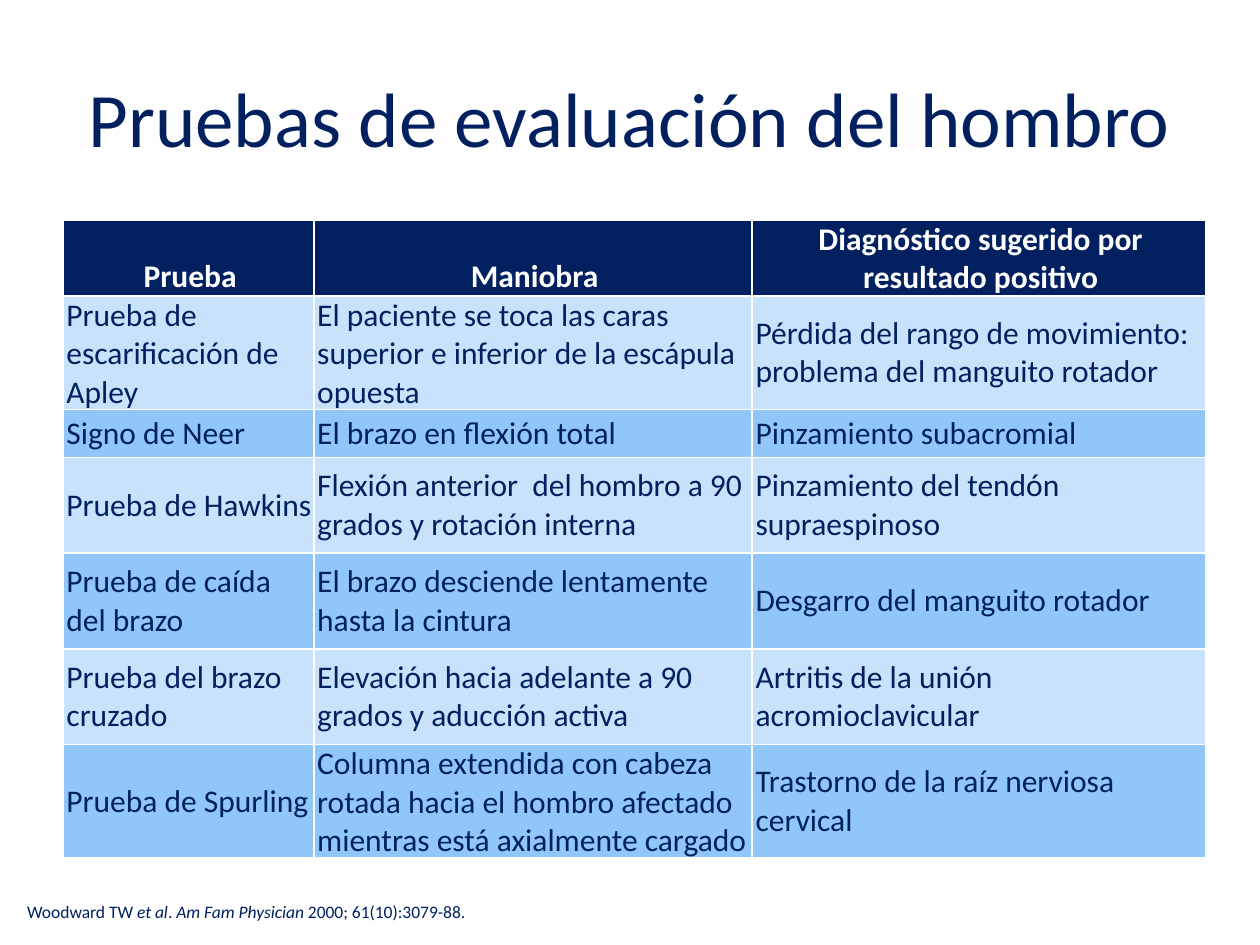
"""Builds a slide with a table of shoulder evaluation tests."""
import pptx
import pptx.dml.color
import pptx.enum.text
import pptx.oxml
import pptx.oxml.ns
import pptx.util

Pt = pptx.util.Pt
ALIGN = pptx.enum.text.PP_ALIGN
ANCHOR = pptx.enum.text.MSO_ANCHOR
COLOURS = {"navy": "002060", "white": "FFFFFF", "pale": "C8E2FC", "sky": "91C6F9"}
FONT = "Calibri"
COLUMN_WIDTHS = [143.3, 250.5, 259.2]
ROW_HEIGHTS = [28, 42.5, 27.4] + [54.7] * 4
TESTS = [
    ("Prueba", "Maniobra", "Diagnóstico sugerido por resultado positivo"),
    ("Prueba de escarificación de Apley",
     "El paciente se toca las caras superior e inferior de la escápula opuesta",
     "Pérdida del rango de movimiento: problema del manguito rotador"),
    ("Signo de Neer", "El brazo en flexión total", "Pinzamiento subacromial"),
    ("Prueba de Hawkins",
     "Flexión anterior  del hombro a 90 grados y rotación interna",
     "Pinzamiento del tendón supraespinoso"),
    ("Prueba de caída del brazo",
     "El brazo desciende lentamente hasta la cintura",
     "Desgarro del manguito rotador"),
    ("Prueba del brazo cruzado",
     "Elevación hacia adelante a 90 grados y aducción activa",
     "Artritis de la unión acromioclavicular"),
    ("Prueba de Spurling",
     "Columna extendida con cabeza rotada hacia el hombro afectado mientras está axialmente cargado",
     "Trastorno de la raíz nerviosa cervical"),
]
CITATION = [("Woodward TW ", False), ("et al", True), (". ", False),
            ("Am Fam Physician", True), (" 2000; 61(10):3079-88.", False)]


def rgb(name):
    return pptx.dml.color.RGBColor.from_string(COLOURS[name])


def add_run(paragraph, words, size, colour="navy", bold=False, italic=False):
    run = paragraph.add_run()
    run.text = words
    run.font.name = FONT
    run.font.size = Pt(size)
    run.font.bold = bold
    run.font.italic = italic
    run.font.color.rgb = rgb(colour)


def add_text(slide, left, top, width, height, pieces, size,
             align=ALIGN.LEFT, anchor=ANCHOR.TOP):
    frame = slide.shapes.add_textbox(Pt(left), Pt(top), Pt(width), Pt(height)).text_frame
    frame.word_wrap = True
    frame.vertical_anchor = anchor
    paragraph = frame.paragraphs[0]
    paragraph.alignment = align
    for words, italic in pieces:
        add_run(paragraph, words, size, italic=italic)


def add_borders(cell):
    properties = cell._tc.get_or_add_tcPr()
    for side in "LRTB":
        properties.append(pptx.oxml.parse_xml(
            f'<a:ln{side} {pptx.oxml.ns.nsdecls("a")} w="{Pt(1)}"><a:solidFill>'
            f'<a:srgbClr val="{COLOURS["white"]}"/></a:solidFill></a:ln{side}>'))


def fill_cell(cell, words, row):
    header = row == 0
    add_borders(cell)
    cell.fill.solid()
    cell.fill.fore_color.rgb = rgb("navy" if header else "pale" if row % 2 else "sky")
    cell.margin_left = Pt(2)
    cell.margin_right = cell.margin_top = cell.margin_bottom = Pt(0)
    cell.vertical_anchor = ANCHOR.BOTTOM if header else ANCHOR.MIDDLE
    paragraph = cell.text_frame.paragraphs[0]
    paragraph.alignment = ALIGN.CENTER if header else ALIGN.LEFT
    add_run(paragraph, words, 18, "white" if header else "navy", bold=header)


def add_tests(slide, left, top, height):
    frame = slide.shapes.add_table(len(TESTS), len(COLUMN_WIDTHS), Pt(left), Pt(top),
                                   Pt(sum(COLUMN_WIDTHS)), Pt(height))
    tests = frame.table
    for column, width in zip(tests.columns, COLUMN_WIDTHS):
        column.width = Pt(width)
    for row, row_height in enumerate(ROW_HEIGHTS):
        tests.rows[row].height = Pt(row_height)
        for column, words in enumerate(TESTS[row]):
            fill_cell(tests.cell(row, column), words, row)
    frame.height = Pt(height)


def main():
    deck = pptx.Presentation()
    deck.slide_width, deck.slide_height = Pt(720), Pt(540)
    slide = deck.slides.add_slide(deck.slide_layouts[6])
    add_text(slide, 36, 21.6, 648, 90, [("Pruebas de evaluación del hombro", False)], 44,
             ALIGN.CENTER, ANCHOR.MIDDLE)
    add_tests(slide, 36, 126, 366.5)
    add_text(slide, 8.5, 511.2, 612, 19.4, CITATION, 10)
    deck.save("out.pptx")


if __name__ == "__main__":
    main()
